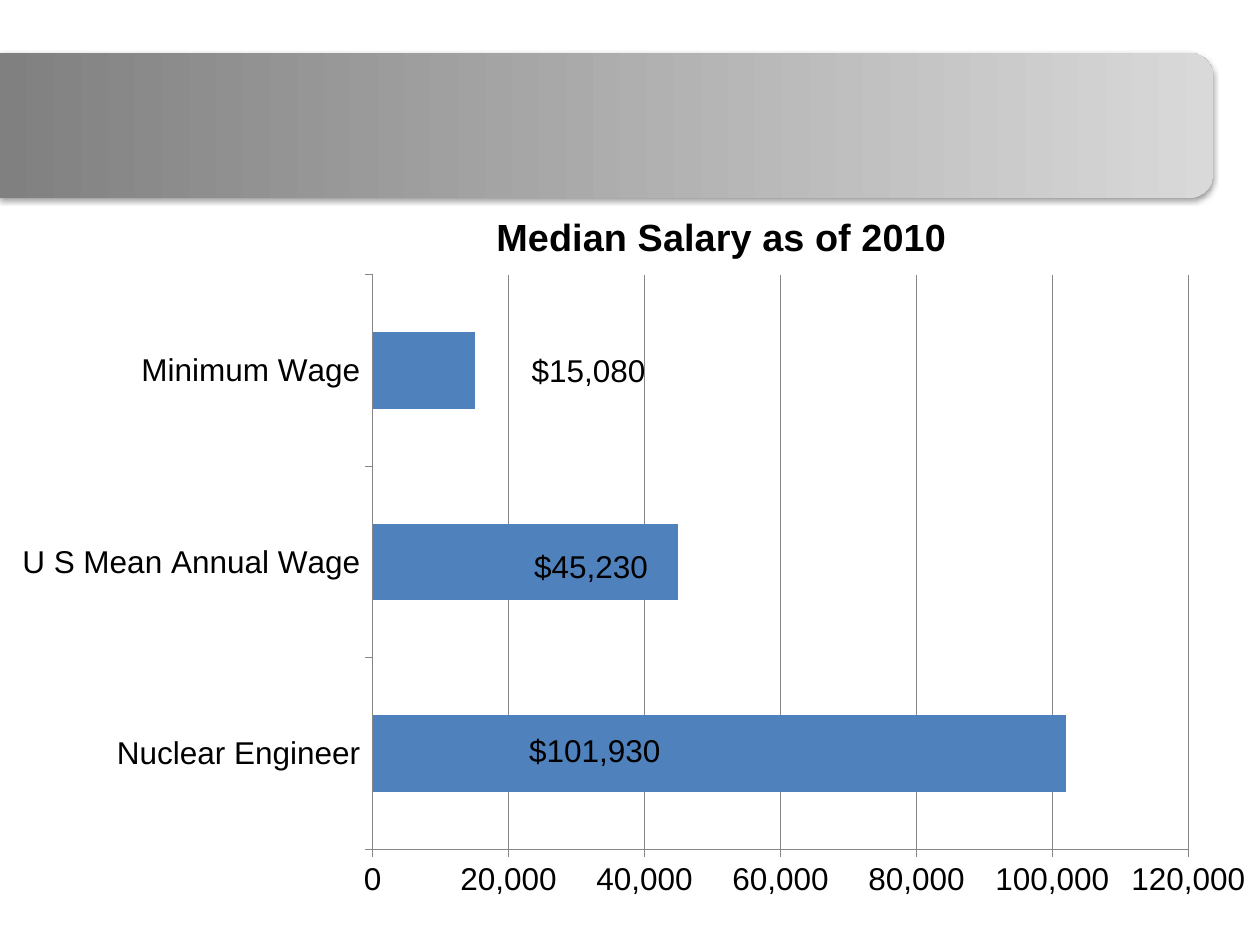
import pptx
import pptx.util
import pptx.chart.data
import pptx.dml.color
import pptx.enum.chart
import pptx.enum.shapes
import pptx.oxml
import pptx.oxml.ns

COLORS = {"dark": "808080", "light": "D9D9D9", "bar": "4F81BD", "line": "868686", "text": "000000"}
FONT = "Arial"
NAMESPACES = pptx.oxml.ns.nsdecls("a", "c")


def rgb(name):
    return pptx.dml.color.RGBColor.from_string(COLORS[name])


def set_layout(parent, index, **values):
    for old in parent.findall(pptx.oxml.ns.qn("c:layout")):
        parent.remove(old)
    parts = "".join(f'<c:{tag} val="{value}"/>' for tag, value in values.items())
    parent.insert(index, pptx.oxml.parse_xml(
        f"<c:layout {NAMESPACES}><c:manualLayout>{parts}</c:manualLayout></c:layout>"))


deck = pptx.Presentation()
deck.slide_width = pptx.util.Inches(10)
deck.slide_height = pptx.util.Inches(7.5)
width, height = deck.slide_width, deck.slide_height
page = deck.slides.add_slide(deck.slide_layouts[6])

band_length, band_depth = int(width * 0.963), int(width * 0.115)
band_middle = int(width * 0.0995)
band = page.shapes.add_shape(
    pptx.enum.shapes.MSO_SHAPE.ROUND_2_SAME_RECTANGLE,
    (band_length - band_depth) // 2, band_middle - band_length // 2, band_depth, band_length)
band.rotation = 90
band.line.fill.background()
band.fill.gradient()
band.fill.gradient_angle = 0
for stop, name in zip(band.fill.gradient_stops, ("dark", "light")):
    stop.color.rgb = rgb(name)
band_properties = band._element.spPr
band_properties.find(pptx.oxml.ns.qn("a:gradFill")).set("rotWithShape", "0")
band.shadow.inherit = False
band_properties.find(pptx.oxml.ns.qn("a:effectLst")).append(pptx.oxml.parse_xml(
    f'<a:outerShdw {NAMESPACES} blurRad="39370" dist="20320" dir="5400000" rotWithShape="0">'
    f'<a:srgbClr val="{COLORS["text"]}"><a:alpha val="38000"/></a:srgbClr></a:outerShdw>'))

salaries = pptx.chart.data.CategoryChartData(number_format="#,##0")
salaries.categories = ["Nuclear Engineer", "U S Mean Annual Wage", "Minimum Wage"]
salaries.add_series("Series 1", [102000, 45000, 15000])
chart = page.shapes.add_chart(
    pptx.enum.chart.XL_CHART_TYPE.BAR_CLUSTERED,
    0, int(height * 0.21), int(width * 0.996), int(height * 0.79), salaries).chart
chart.has_legend = False
chart.font.name = FONT
chart.font.size = pptx.util.Pt(18)
chart.font.color.rgb = rgb("text")

chart.has_title = True
title = chart.chart_title
title.include_in_layout = False
title.text_frame.text = "Median Salary as of 2010"
title_font = title.text_frame.paragraphs[0].font
title_font.name = FONT
title_font.size = pptx.util.Pt(21.6)
title_font.bold = True
title_font.color.rgb = rgb("text")
set_layout(title._element, 1, xMode="edge", yMode="edge", x=0.39, y=0.01)
set_layout(chart._chartSpace.chart.plotArea, 0, layoutTarget="inner",
           xMode="edge", yMode="edge", x=0.297, y=0.102, w=0.65, h=0.77)

plot = chart.plots[0]
plot.gap_width = 150
plot.vary_by_categories = False
bars = plot.series[0].format.fill
bars.solid()
bars.fore_color.rgb = rgb("bar")

chart.value_axis.has_major_gridlines = True
chart.value_axis.minimum_scale = 0
chart.value_axis.maximum_scale = 120000
chart.value_axis.major_unit = 20000
chart.value_axis.tick_labels.number_format = "#,##0"
chart.value_axis.tick_labels.number_format_is_linked = False
for axis in (chart.category_axis, chart.value_axis):
    axis.major_tick_mark = pptx.enum.chart.XL_TICK_MARK.OUTSIDE
    axis.minor_tick_mark = pptx.enum.chart.XL_TICK_MARK.NONE
for part in (chart.category_axis, chart.value_axis, chart.value_axis.major_gridlines):
    part.format.line.color.rgb = rgb("line")
    part.format.line.width = pptx.util.Pt(0.75)

for text, left, top, label_width in (
    ("$15,080", 4.12, 2.74, 1.75),
    ("$45,230", 4.14, 4.29, 1.92),
    ("$101,930", 4.1, 5.75, 1.58),
):
    box = page.shapes.add_textbox(
        int(width * left / 10), int(height * top / 7.5), int(width * label_width / 10), int(width * 0.04))
    box.text_frame.word_wrap = True
    para = box.text_frame.paragraphs[0]
    para.text = text
    para.font.name = FONT
    para.font.size = pptx.util.Pt(18)
    para.font.color.rgb = rgb("text")

deck.save("out.pptx")
